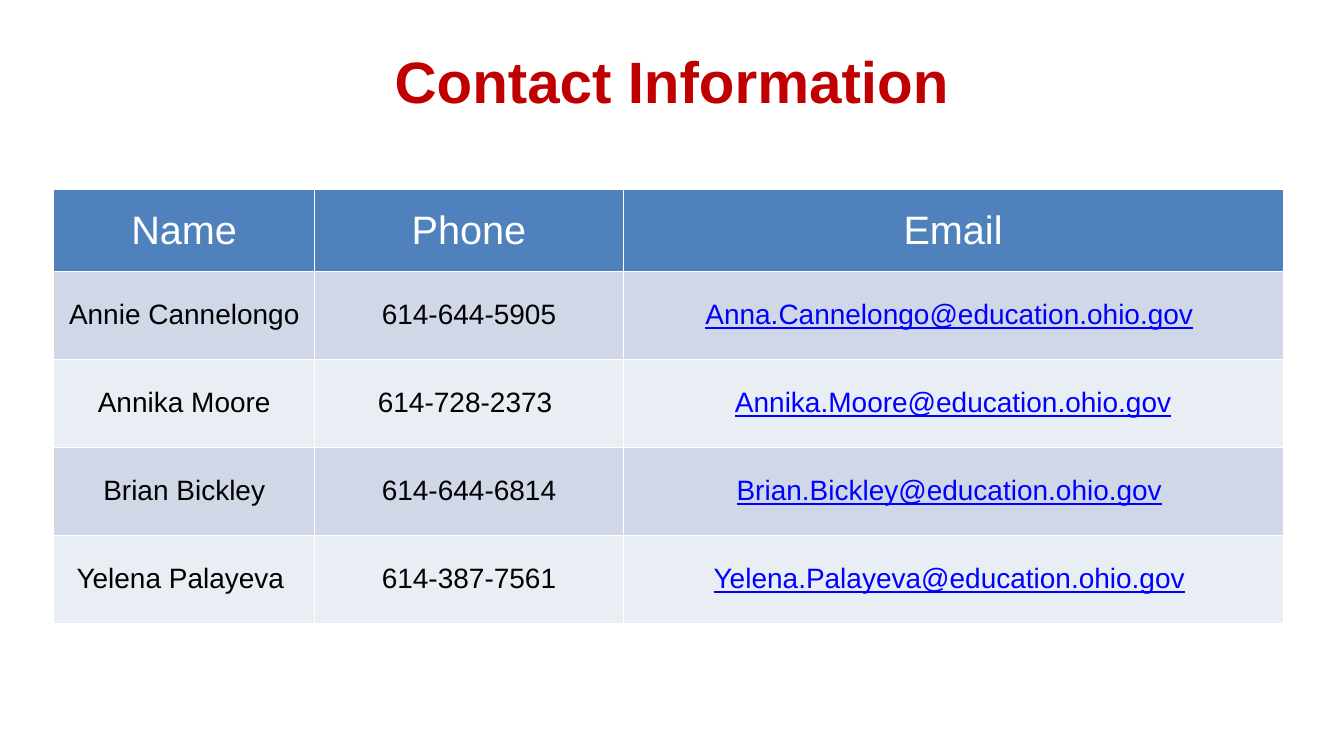
from dataclasses import dataclass

from lxml.etree import SubElement
from pptx import Presentation
from pptx.dml.color import RGBColor
from pptx.enum.text import MSO_ANCHOR, MSO_AUTO_SIZE, PP_ALIGN
from pptx.oxml.ns import qn
from pptx.util import Cm, Pt

# Content
TITLE = "Contact Information"
HEADS = ("Name", "Phone", "Email")
PEOPLE = [
    ("Annie Cannelongo", "614-644-5905", "Anna.Cannelongo@education.ohio.gov "),
    ("Annika Moore", "614-728-2373 ", "Annika.Moore@education.ohio.gov"),
    ("Brian Bickley", "614-644-6814", "Brian.Bickley@education.ohio.gov "),
    ("Yelena Palayeva ", "614-387-7561", "Yelena.Palayeva@education.ohio.gov "),
]
WIDTHS = (7.9, 9.32, 19.96)
HEAD_H, ROW_H = 2.46, 2.66


@dataclass(frozen=True)
class Theme:
    font: str = "Arial"
    title: str = "C00000"
    head: str = "4F81BD"
    bands: tuple = ("D0D8E8", "E9EDF4")
    white: str = "FFFFFF"
    text: str = "000000"
    mail: str = "0000FF"
    title_size: int = 50
    head_size: int = 34
    body_size: int = 24
    line: int = 1


THEME = Theme()


def style(run, size, color, bold=False, under=False):
    font = run.font
    font.name, font.size = THEME.font, Pt(size)
    font.bold, font.underline = bold, under
    font.color.rgb = RGBColor.from_string(color)


def border(cell):
    props = cell._tc.get_or_add_tcPr()
    for side in ("a:lnL", "a:lnR", "a:lnT", "a:lnB"):
        line = SubElement(props, qn(side), w=str(Pt(THEME.line)))
        fill = SubElement(line, qn("a:solidFill"))
        SubElement(fill, qn("a:srgbClr"), val=THEME.white)


def fill_cell(cell, text, size, color, back):
    border(cell)
    cell.fill.solid()
    cell.fill.fore_color.rgb = RGBColor.from_string(back)
    cell.vertical_anchor = MSO_ANCHOR.MIDDLE
    cell.margin_left = cell.margin_right = Cm(0.3)
    cell.margin_top = cell.margin_bottom = Cm(0.15)
    para = cell.text_frame.paragraphs[0]
    para.alignment = PP_ALIGN.CENTER
    # Only the address itself is underlined, not a space after it
    word = text.rstrip()
    para.text = word
    mail = "@" in word
    style(para.runs[0], size, THEME.mail if mail else color, under=mail)
    if text != word:
        tail = para.add_run()
        tail.text = text[len(word):]
        style(tail, size, color)


def add_title(slide):
    title = slide.shapes.title
    title.left, title.top = Cm(6.6), Cm(1.35)
    title.width, title.height = Cm(27.43), Cm(2.16)
    frame = title.text_frame
    frame.text = TITLE
    frame.auto_size = MSO_AUTO_SIZE.NONE
    frame.vertical_anchor = MSO_ANCHOR.MIDDLE
    frame.margin_left = frame.margin_right = 0
    frame.margin_top = frame.margin_bottom = 0
    para = frame.paragraphs[0]
    para.alignment = PP_ALIGN.CENTER
    style(para.runs[0], THEME.title_size, THEME.title, bold=True)


def add_contacts(slide):
    rows = [HEADS, *PEOPLE]
    high = HEAD_H + ROW_H * len(PEOPLE)
    table = slide.shapes.add_table(
        len(rows), len(HEADS), Cm(1.62), Cm(5.74), Cm(sum(WIDTHS)), Cm(high)
    ).table
    for col, width in zip(table.columns, WIDTHS):
        col.width = Cm(width)
    for r, row in enumerate(rows):
        table.rows[r].height = Cm(ROW_H if r else HEAD_H)
        if r:
            look = THEME.body_size, THEME.text, THEME.bands[(r - 1) % 2]
        else:
            look = THEME.head_size, THEME.white, THEME.head
        for c, text in enumerate(row):
            fill_cell(table.cell(r, c), text, *look)


def main():
    deck = Presentation()
    deck.slide_width, deck.slide_height = Cm(40.64), Cm(22.86)
    slide = deck.slides.add_slide(deck.slide_layouts[5])
    add_title(slide)
    add_contacts(slide)
    deck.save("out.pptx")


if __name__ == "__main__":
    main()
